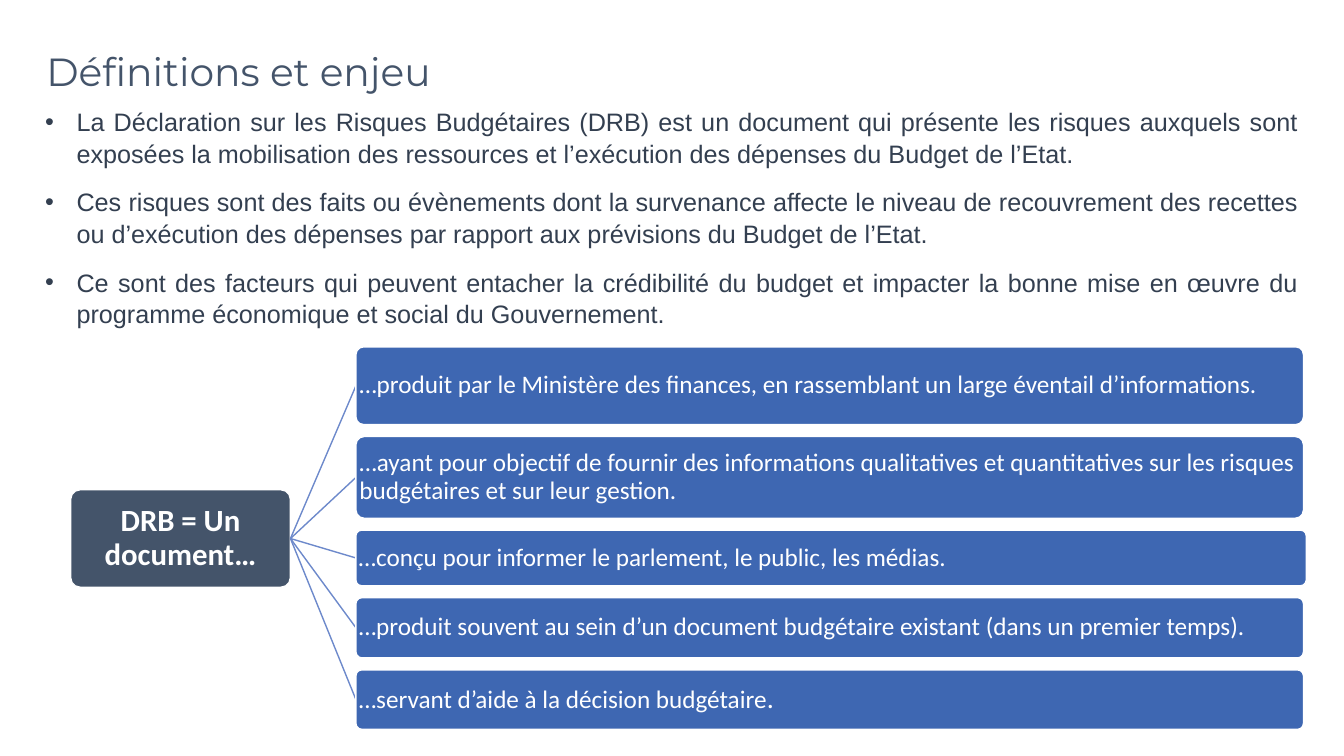
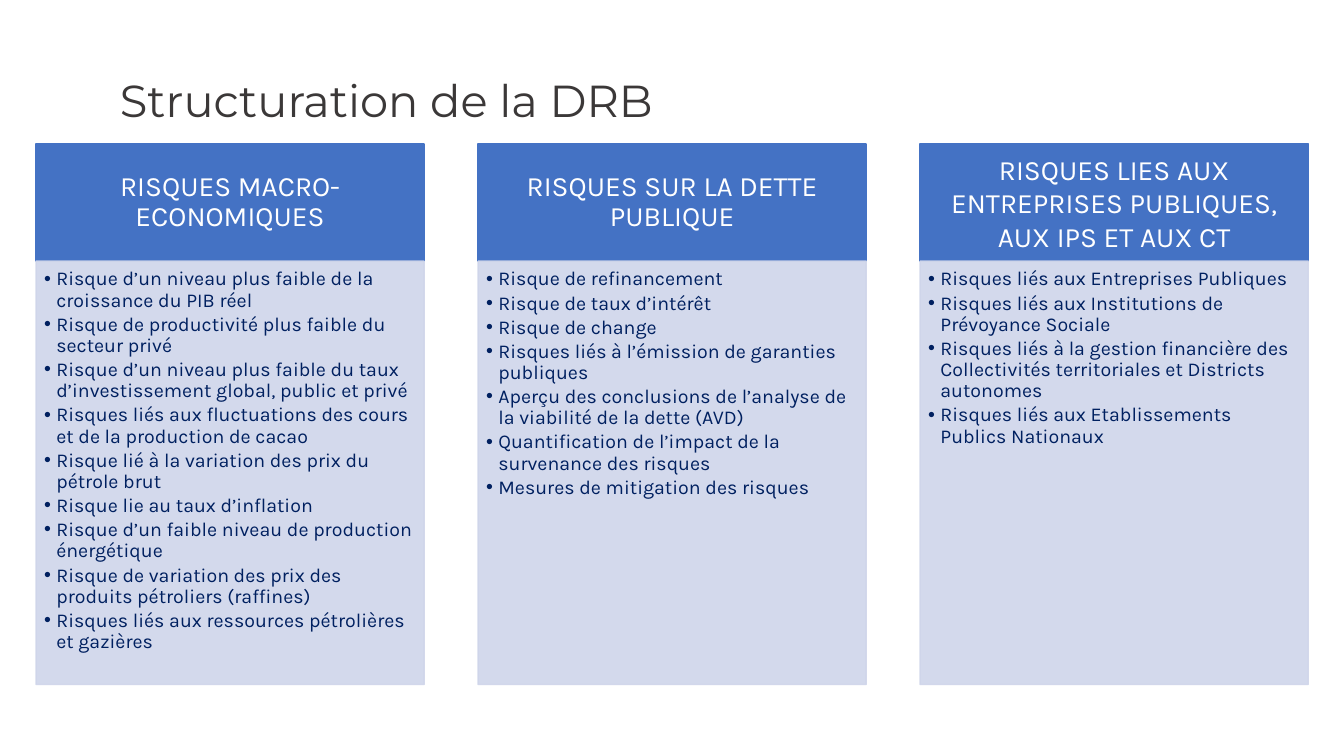
import pptx
import pptx.util
from lxml import etree
from pptx.dml.color import RGBColor
from pptx.enum.shapes import MSO_CONNECTOR, MSO_SHAPE
from pptx.enum.text import MSO_ANCHOR, PP_ALIGN
from pptx.oxml.ns import qn
from pptx.util import Cm

WHITE = RGBColor(0xFF, 0xFF, 0xFF)
SLATE = RGBColor(0x44, 0x54, 0x6A)
DARK_SLATE = RGBColor(0x33, 0x3F, 0x50)
CHARCOAL = RGBColor(0x3B, 0x38, 0x38)
NAVY = RGBColor(0x00, 0x20, 0x60)
BRANCH_BLUE = RGBColor(0x3E, 0x67, 0xB2)
LINK_BLUE = RGBColor(0x6D, 0x89, 0xCB)
HEADER_BLUE = RGBColor(0x44, 0x72, 0xC4)
PALE_BLUE = RGBColor(0xCF, 0xD5, 0xEA)

DEFINITIONS = [
    "La Déclaration sur les Risques Budgétaires (DRB) est un document qui présente les risques "
    "auxquels sont exposées la mobilisation des ressources et l’exécution des dépenses du Budget "
    "de l’Etat.",
    "Ces risques sont des faits ou évènements dont la survenance affecte le niveau de recouvrement "
    "des recettes ou d’exécution des dépenses par rapport aux prévisions du Budget de l’Etat.",
    "Ce sont des facteurs qui peuvent entacher la crédibilité du budget et impacter la bonne mise "
    "en œuvre du programme économique et social du Gouvernement.",
]

# Text, width and height (cm) of each branch
BRANCHES = [
    ("…produit par le Ministère des finances, en rassemblant un large éventail d’informations.",
     23.88, 1.96),
    ("…ayant pour objectif de fournir des informations qualitatives et quantitatives sur les "
     "risques budgétaires et sur leur gestion.", 23.88, 2.06),
    ("…conçu pour informer le parlement, le public, les médias.", 23.95, 1.4),
    ("…produit souvent au sein d’un document budgétaire existant (dans un premier temps).",
     23.88, 1.52),
    ("…servant d’aide à la décision budgétaire", 23.88, 1.5),
]

# Heading, heading line spacing and risks of each column
RISK_COLUMNS = [
    ("RISQUES MACRO-ECONOMIQUES", 0.9, [
        "Risque d’un niveau plus faible de la croissance du PIB réel",
        "Risque de productivité plus faible du secteur privé",
        "Risque d’un niveau plus faible du taux d’investissement global, public et privé",
        "Risques liés aux fluctuations des cours et de la production de cacao",
        "Risque lié à la variation des prix du pétrole brut",
        "Risque lie au taux d’inflation",
        "Risque d’un faible niveau de production énergétique",
        "Risque de variation des prix des produits pétroliers (raffines)",
        "Risques liés aux ressources pétrolières et gazières",
    ]),
    ("RISQUES SUR LA DETTE PUBLIQUE", 0.9, [
        "Risque de refinancement",
        "Risque de taux d’intérêt",
        "Risque de change",
        "Risques liés à l’émission de garanties publiques",
        "Aperçu des conclusions de l’analyse de la viabilité de la dette (AVD)",
        "Quantification de l’impact de la survenance des risques",
        "Mesures de mitigation des risques",
    ]),
    ("RISQUES LIES AUX ENTREPRISES PUBLIQUES, AUX IPS ET AUX CT", 1, [
        "Risques liés aux Entreprises Publiques",
        "Risques liés aux Institutions de Prévoyance Sociale",
        "Risques liés à la gestion financière des Collectivités territoriales et Districts autonomes",
        "Risques liés aux Etablissements Publics Nationaux",
    ]),
]


def set_frame(frame, insets, anchor):
    """Set wrapping, anchor and the left, top, right and bottom insets in cm."""
    frame.word_wrap = True
    frame.vertical_anchor = anchor
    (frame.margin_left, frame.margin_top,
     frame.margin_right, frame.margin_bottom) = map(Cm, insets)


def write_paragraphs(frame, texts, font, size, color, align=PP_ALIGN.LEFT, bold=False,
                     spacing=0.9, before=0, after=0, bullet_indent=None):
    for index, text in enumerate(texts):
        paragraph = frame.add_paragraph() if index else frame.paragraphs[0]
        paragraph.text = text
        paragraph.alignment = align
        paragraph.line_spacing = spacing
        paragraph.space_before = pptx.util.Pt(before if index else 0)
        paragraph.space_after = pptx.util.Pt(after)
        if bullet_indent:
            add_bullet(paragraph, bullet_indent)
        paragraph.font.name = font
        paragraph.font.size = pptx.util.Pt(size)
        paragraph.font.bold = bold
        paragraph.font.color.rgb = color


def add_bullet(paragraph, indent):
    properties = paragraph._p.get_or_add_pPr()
    properties.set("marL", str(Cm(indent)))
    properties.set("indent", str(-Cm(indent)))
    etree.SubElement(properties, qn("a:buFont")).set("typeface", "Arial")
    etree.SubElement(properties, qn("a:buChar")).set("char", "•")


def add_titled_slide(deck, title, box, size, color):
    slide = deck.slides.add_slide(deck.slide_layouts[5])
    heading = slide.shapes.title
    heading.left, heading.top, heading.width, heading.height = map(Cm, box)
    set_frame(heading.text_frame, (0, 0, 0, 0), MSO_ANCHOR.MIDDLE)
    write_paragraphs(heading.text_frame, [title], "Montserrat", size, color)
    return slide


def add_panel(slide, preset, box, fill, outline, insets, anchor=MSO_ANCHOR.MIDDLE):
    panel = slide.shapes.add_shape(preset, *map(Cm, box))
    panel.shadow.inherit = False
    panel.fill.solid()
    panel.fill.fore_color.rgb = fill
    panel.line.color.rgb = outline
    panel.line.width = pptx.util.Pt(1)
    set_frame(panel.text_frame, insets, anchor)
    return panel


def add_node(slide, box, fill, inset):
    node = add_panel(slide, MSO_SHAPE.ROUNDED_RECTANGLE, box, fill, WHITE, [inset] * 4)
    node.adjustments[0] = 0.1
    return node


def add_link(slide, *ends):
    link = slide.shapes.add_connector(MSO_CONNECTOR.STRAIGHT, *map(Cm, ends))
    link.line.color.rgb = LINK_BLUE
    link.line.width = pptx.util.Pt(1)
    etree.SubElement(link._element.spPr, qn("a:effectLst"))


def set_opacity(panel, percent):
    """Apply one opacity to the fill and the outline."""
    for color in panel._element.spPr.iter(qn("a:srgbClr")):
        etree.SubElement(color, qn("a:alpha")).set("val", str(percent * 1000))


def add_document_tree(slide):
    root_left, root_top, root_width, root_height = root_box = (1.78, 12.34, 5.54, 2.46)
    root = add_node(slide, root_box, SLATE, 0.05)
    write_paragraphs(root.text_frame, ["DRB = Un document…"], "Calibri", 22, WHITE,
                     PP_ALIGN.CENTER, bold=True)

    branch_left, top, gap = 8.97, 8.74, 0.3
    for text, width, height in BRANCHES:
        add_link(slide, root_left + root_width, root_top + root_height / 2,
                 branch_left, top + height / 2)
        branch = add_node(slide, (branch_left, top, width, height), BRANCH_BLUE, 0.03)
        write_paragraphs(branch.text_frame, [text], "Calibri", 18, WHITE)
        top += height + gap
    full_stop = branch.text_frame.paragraphs[0].add_run()
    full_stop.text = "."
    full_stop.font.size = pptx.util.Pt(20)


def add_risk_column(slide, left, heading, heading_spacing, risks):
    top, width, header_height, body_height = 3.63, 9.78, 2.95, 10.67
    header = add_panel(slide, MSO_SHAPE.RECTANGLE, (left, top, width, header_height),
                       HEADER_BLUE, HEADER_BLUE, (0.4, 0.23, 0.4, 0.23))
    write_paragraphs(header.text_frame, [heading], "Karla", 20, WHITE, PP_ALIGN.CENTER,
                     spacing=heading_spacing)
    body = add_panel(slide, MSO_SHAPE.RECTANGLE, (left, top + header_height, width, body_height),
                     PALE_BLUE, PALE_BLUE, (0.2, 0.2, 0.28, 0.3), MSO_ANCHOR.TOP)
    set_opacity(body, 90)
    write_paragraphs(body.text_frame, risks, "Karla", 14, NAVY, after=2.1, bullet_indent=0.31)


def build_definitions(deck):
    slide = add_titled_slide(deck, "Définitions et enjeu", (1.17, 0.51, 26.97, 2.72), 28, SLATE)
    definitions = slide.shapes.add_textbox(*map(Cm, (0.89, 2.51, 32.08, 5.74))).text_frame
    set_frame(definitions, (0.25, 0.13, 0.25, 0.13), MSO_ANCHOR.TOP)
    write_paragraphs(definitions, DEFINITIONS, "Arial", 18, DARK_SLATE, PP_ALIGN.JUSTIFY,
                     spacing=1.05, before=6, after=6, bullet_indent=0.79)
    add_document_tree(slide)


def build_structure(deck):
    slide = add_titled_slide(deck, "Structuration de la DRB", (3.02, 0.99, 28.3, 3.2), 32, CHARCOAL)
    first_left, pitch = 0.91, 11.14
    for index, column in enumerate(RISK_COLUMNS):
        add_risk_column(slide, first_left + index * pitch, *column)


def main():
    deck = pptx.Presentation()
    deck.slide_width, deck.slide_height = Cm(33.87), Cm(19.05)
    build_definitions(deck)
    build_structure(deck)
    deck.save("out.pptx")


if __name__ == "__main__":
    main()
